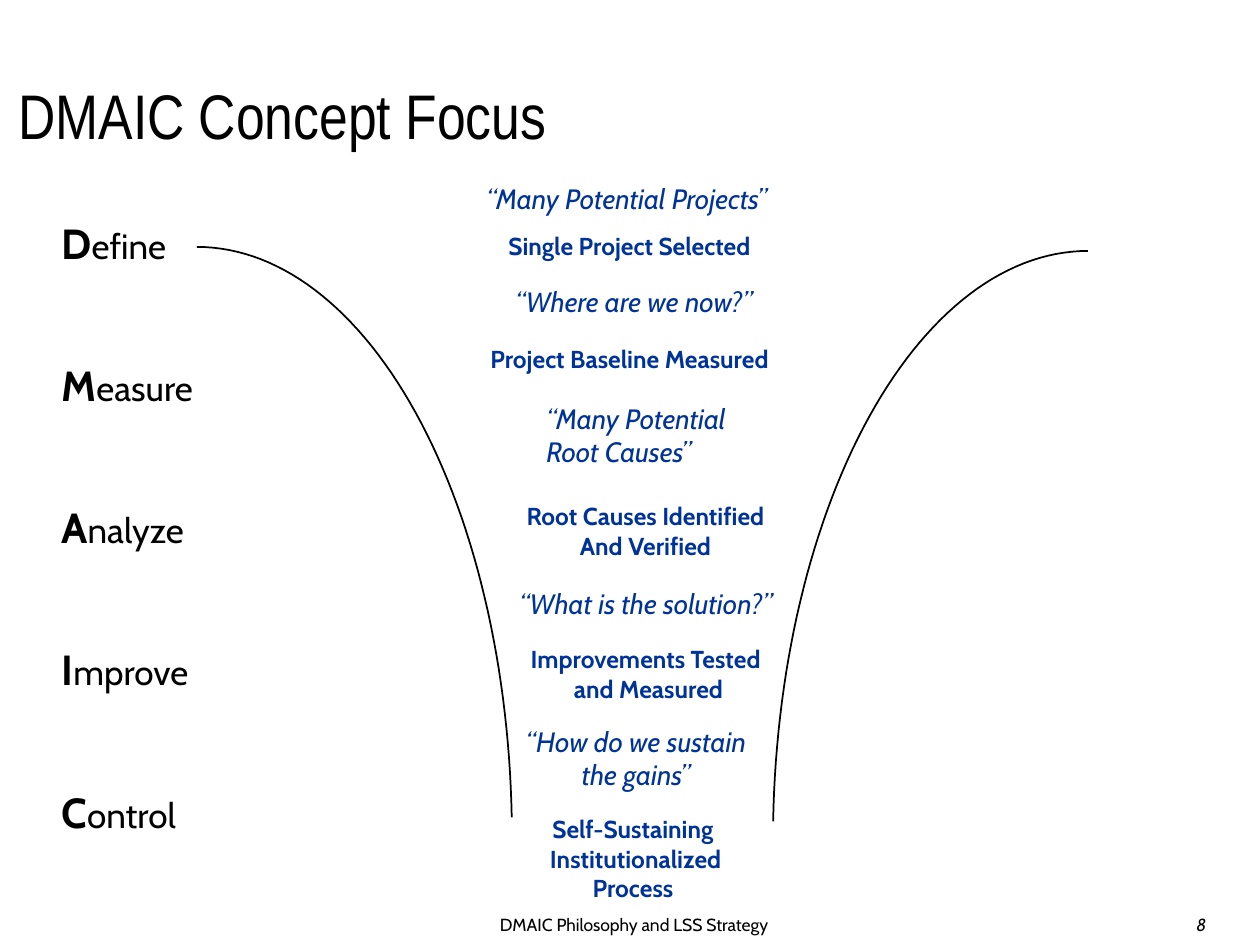
import math
from pptx import Presentation, util as u
from pptx.dml.color import RGBColor
from pptx.enum import text

PX_PER_INCH = 126
BLACK, BLUE = "000000", "003399"
PHASES = ["Define", "Measure", "Analyze", "Improve", "Control"]
QUESTION = {"size": 16, "italic": True, "color": BLUE}
OUTCOME = {"size": 14, "bold": True, "color": BLUE}
FOCUS_STEPS = [
    ("“Many Potential Projects”", (474, 175, 336, 47), QUESTION, "left"),
    ("Single Project Selected", (496, 225, 310, 42), OUTCOME, "left"),
    ("“Where are we now?”", (503, 278, 294, 47), QUESTION, "left"),
    ("Project Baseline Measured", (478, 338, 353, 42), OUTCOME, "left"),
    ("“Many Potential\nRoot Causes”", (534, 395, 227, 81), QUESTION, "left"),
    ("Root Causes Identified\nAnd Verified", (492, 495, 307, 72), OUTCOME, "center"),
    ("“What is the solution?”", (493, 580, 306, 47), QUESTION, "center"),
    ("Improvements Tested \nand Measured", (496, 638, 305, 72), OUTCOME, "center"),
    ("“How do we sustain\nthe gains”", (488, 718, 296, 81), QUESTION, "center"),
    ("Self-Sustaining\n Institutionalized\nProcess", (514, 808, 238, 101), OUTCOME, "center"),
]


def px(length):
    """Turn pixels into EMU."""
    return u.Emu(round(length * u.Inches(1) / PX_PER_INCH))


def rgb(color):
    """Turn a hex string into a colour."""
    return RGBColor.from_string(color)


def format_run(run, size, color=BLACK, bold=False, italic=False, name="Cabin"):
    """Set the font of one run."""
    font = run.font
    font.name, font.size, font.bold, font.italic = name, u.Pt(size), bold, italic
    font.color.rgb = rgb(color)


def add_text(slide, box, content, style, align="left", anchor="top", wrap=False):
    """Add a text box with one paragraph per line and return its frame."""
    frame = slide.shapes.add_textbox(*map(px, box)).text_frame
    frame.word_wrap = wrap
    frame.auto_size = text.MSO_AUTO_SIZE.NONE if wrap else text.MSO_AUTO_SIZE.SHAPE_TO_FIT_TEXT
    frame.vertical_anchor = text.MSO_ANCHOR[anchor.upper()]
    frame.text = content
    for paragraph in frame.paragraphs:
        paragraph.alignment = text.PP_ALIGN[align.upper()]
        for run in paragraph.runs:
            format_run(run, **style)
    return frame


def add_title(slide, box):
    """Add the slide title."""
    style = {"size": 36, "name": "Arial Narrow"}
    frame = add_text(slide, box, "DMAIC Concept Focus", style, anchor="bottom", wrap=True)
    frame.paragraphs[0].line_spacing = 0.9


def add_phases(slide, box):
    """Add the five phase names, evenly spaced, with a large bold initial."""
    left, top, width, height = box
    row_height = 63
    step = (height - row_height) / (len(PHASES) - 1)
    for index, phase in enumerate(PHASES):
        row = (left, top + index * step, width, row_height)
        frame = add_text(slide, row, phase[0], {"size": 24, "bold": True}, wrap=True)
        rest = frame.paragraphs[0].add_run()
        rest.text = phase[1:]
        format_run(rest, 20)


def add_funnel_side(slide, box, mirrored=False):
    """Add one side of the funnel as nearly a quarter of an ellipse."""
    left, top, width, height = box
    segments, sweep = 60, math.radians(88)
    points = []
    for index in range(segments + 1):
        angle = sweep * index / segments
        across = width * math.sin(angle)
        x = left + width - across if mirrored else left + across
        points.append((px(x), px(top + height * (1 - math.cos(angle)))))
    builder = slide.shapes.build_freeform(*points[0])
    builder.add_line_segments(points[1:], close=False)
    shape = builder.convert_to_shape()
    shape.shadow.inherit = False
    shape.fill.background()
    shape.line.color.rgb = rgb(BLACK)
    shape.line.width = u.Pt(1)


def add_focus_steps(slide):
    """Add the questions and outcomes that run down the funnel."""
    for content, box, style, align in FOCUS_STEPS:
        wrap = content.startswith("“How")
        add_text(slide, box, content, style, align, wrap=wrap)


def add_footer(slide, box):
    """Add the centred footer and the page number at the right end."""
    left, top, width, height = box
    add_text(slide, (left, top, 822, height), "DMAIC Philosophy and LSS Strategy",
             {"size": 10}, "center", wrap=True)
    add_text(slide, (left + width - 62, top - 2, 62, 35), "8",
             {"size": 10, "italic": True}, anchor="bottom", wrap=True)


def main():
    """Build and save the presentation."""
    presentation = Presentation()
    presentation.slide_width, presentation.slide_height = px(1260), px(945)
    slide = presentation.slides.add_slide(presentation.slide_layouts[6])
    add_footer(slide, (223, 908, 1023, 37))
    add_title(slide, (6, 1, 998, 158))
    add_funnel_side(slide, (773, 251, 315, 591), mirrored=True)
    add_funnel_side(slide, (197, 247, 315, 591))
    add_phases(slide, (49, 211, 180, 632))
    add_focus_steps(slide)
    presentation.save("out.pptx")


if __name__ == "__main__":
    main()
